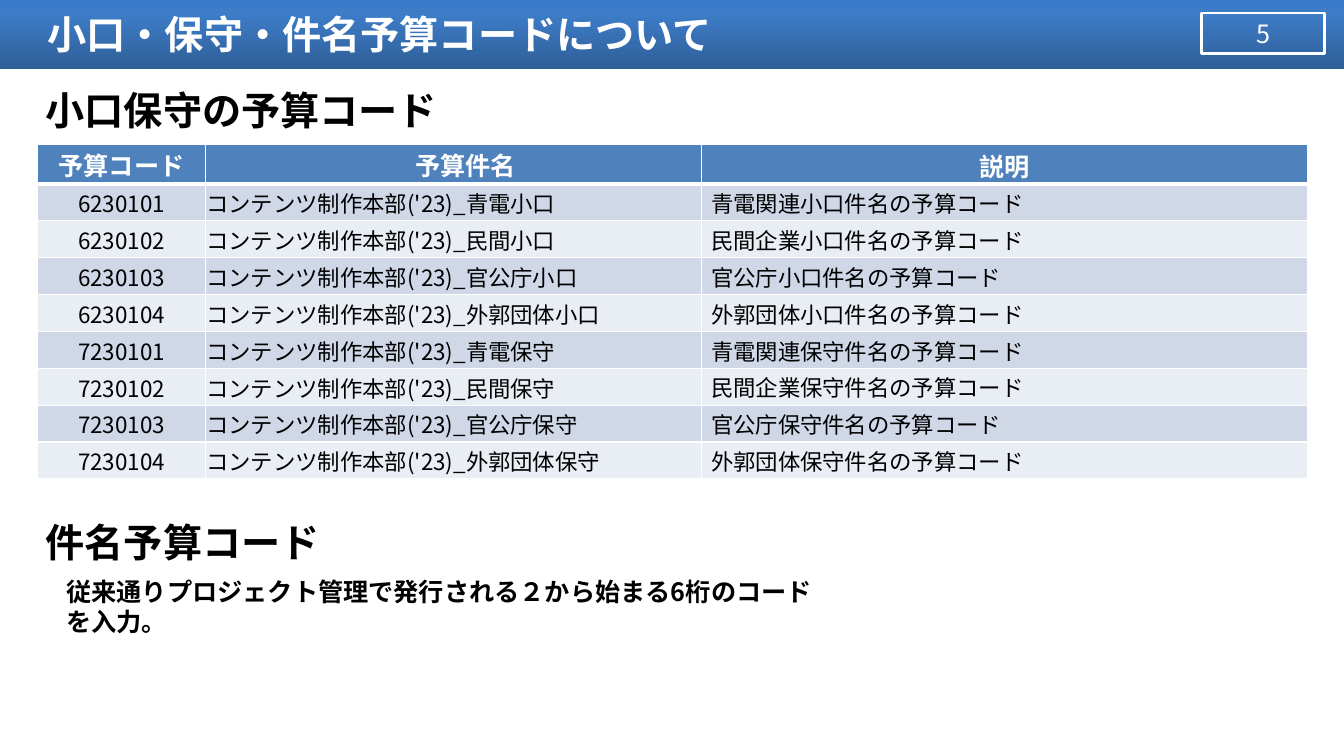
from copy import deepcopy
from dataclasses import dataclass

from pptx import Presentation
from pptx.dml.color import RGBColor
from pptx.enum.shapes import MSO_SHAPE
from pptx.enum.text import MSO_ANCHOR, PP_ALIGN
from pptx.oxml.ns import qn
from pptx.oxml.xmlchemy import OxmlElement
from pptx.util import Cm, Pt

RECT = MSO_SHAPE.RECTANGLE
TOP, MID = MSO_ANCHOR.TOP, MSO_ANCHOR.MIDDLE
LEFT, CENTER = PP_ALIGN.LEFT, PP_ALIGN.CENTER


@dataclass(frozen=True)
class Theme:
    white: str = "FFFFFF"
    black: str = "000000"
    head: str = "4F81BD"
    bands: tuple = ("D0D8E8", "E9EDF4")
    bar: tuple = ((0, "2F5F99"), (0.8, "3D7CC7"), (1, "3A7CCB"))
    latin: str = "Calibri"
    asian: str = "Noto Sans CJK JP"
    title: int = 28
    label: int = 18
    cell: int = 16


THEME = Theme()

# Budget codes: a series prefix and kind, then one row per client
SERIES = (("62301", "小口"), ("72301", "保守"))
CLIENTS = (("青電", "青電関連"), ("民間", "民間企業"),
           ("官公庁", "官公庁"), ("外郭団体", "外郭団体"))
HEADS = ("予算コード", "　予算件名", "説明")
COLS = (4.22, 12.5, 15.29)
HEAD_H, ROW_H = 0.99, 0.93


def rgb(color):
    return RGBColor.from_string(color)


def write(frame, text, size, color, bold=False, align=LEFT, font=THEME.asian):
    frame.text = text
    para = frame.paragraphs[0]
    para.alignment = align
    for run in para.runs:
        run.font.size, run.font.bold = Pt(size), bold
        run.font.name = font
        run.font.color.rgb = rgb(color)
        east = OxmlElement("a:ea")
        east.set("typeface", THEME.asian)
        run.font._element.append(east)
    return para


def add_text(slide, box, text, size, color, anchor=TOP, font=THEME.asian):
    frame = slide.shapes.add_textbox(*map(Cm, box)).text_frame
    frame.word_wrap = True
    frame.vertical_anchor = anchor
    return write(frame, text, size, color, True, font=font)


def add_rect(slide, box):
    rect = slide.shapes.add_shape(RECT, *map(Cm, box))
    rect.shadow.inherit = False
    return rect


def add_bar(slide):
    bar = add_rect(slide, (0, 0, 33.87, 1.73))
    bar.line.fill.background()
    bar.fill.gradient()
    bar.fill.gradient_angle = 90
    stops = bar._element.spPr.find(qn("a:gradFill")).find(qn("a:gsLst"))
    stops.append(deepcopy(stops[-1]))
    for stop, (place, color) in zip(bar.fill.gradient_stops, THEME.bar):
        stop.position = place
        stop.color.rgb = rgb(color)


def add_page(slide, number):
    page = add_rect(slide, (30.28, 0.33, 3.1, 1.02))
    page.fill.background()
    page.line.color.rgb = rgb(THEME.white)
    page.line.width = Pt(1.5)
    page.text_frame.vertical_anchor = MID
    write(page.text_frame, number, THEME.label, THEME.white, align=CENTER)


def set_edges(cell, base):
    for side, width in (("L", 1), ("R", 1), ("T", 1), ("B", base)):
        edge = OxmlElement(f"a:ln{side}")
        edge.set("w", str(Pt(width)))
        fill = OxmlElement("a:solidFill")
        tint = OxmlElement("a:srgbClr")
        tint.set("val", THEME.white)
        fill.append(tint)
        edge.append(fill)
        cell._tc.get_or_add_tcPr().append(edge)


def set_cell(cell, text, col, head, band):
    note = col == 2
    pad = 0 if head else 0.03
    side = 0.25 if note else pad
    cell.margin_left = cell.margin_right = Cm(side)
    cell.margin_top = Cm(0.07 if note else pad)
    cell.margin_bottom = 0
    cell.vertical_anchor = TOP if note else MID
    set_edges(cell, 3 if head else 1)
    cell.fill.solid()
    cell.fill.fore_color.rgb = rgb(band)
    write(cell.text_frame, text, THEME.label if head else THEME.cell,
          THEME.white if head else THEME.black, head,
          CENTER if head or col == 0 else LEFT)


def add_codes(slide):
    rows = [HEADS]
    for prefix, kind in SERIES:
        for num, (name, full) in enumerate(CLIENTS, 1):
            rows.append((f"{prefix}{num:02}",
                         f"コンテンツ制作本部('23)_{name}{kind}",
                         f"{full}{kind}件名の予算コード"))
    high = HEAD_H + ROW_H * (len(rows) - 1)
    table = slide.shapes.add_table(len(rows), len(COLS), Cm(0.95), Cm(3.64),
                                   Cm(sum(COLS)), Cm(high)).table
    for col, width in zip(table.columns, COLS):
        col.width = Cm(width)
    for i, row in enumerate(rows):
        head = i == 0
        table.rows[i].height = Cm(HEAD_H if head else ROW_H)
        band = THEME.head if head else THEME.bands[(i - 1) % 2]
        for j, text in enumerate(row):
            set_cell(table.cell(i, j), text, j, head, band)


def main():
    deck = Presentation()
    deck.slide_width, deck.slide_height = Cm(33.87), Cm(19.05)
    slide = deck.slides.add_slide(deck.slide_layouts[6])

    # Title bar
    add_bar(slide)
    add_text(slide, (0.95, 0, 29.33, 1.73), "小口・保守・件名予算コードについて",
             THEME.title, THEME.white, MID)
    add_page(slide, "5")

    # Section headings
    for top, width, text in ((2.05, 11.73, "小口保守の予算コード"),
                             (12.93, 7.65, "件名予算コード")):
        add_text(slide, (0.9, top, width, 1.45), text, THEME.title,
                 THEME.black, font=THEME.latin)

    # Code table and closing note
    add_codes(slide)
    note = add_text(slide, (1.42, 14.4, 19.43, 1.02),
                    "従来通りプロジェクト管理で発行される２から始まる6桁のコードを入力。",
                    THEME.label, THEME.black)
    note.line_spacing = Pt(21.6)

    deck.save("out.pptx")


if __name__ == "__main__":
    main()
